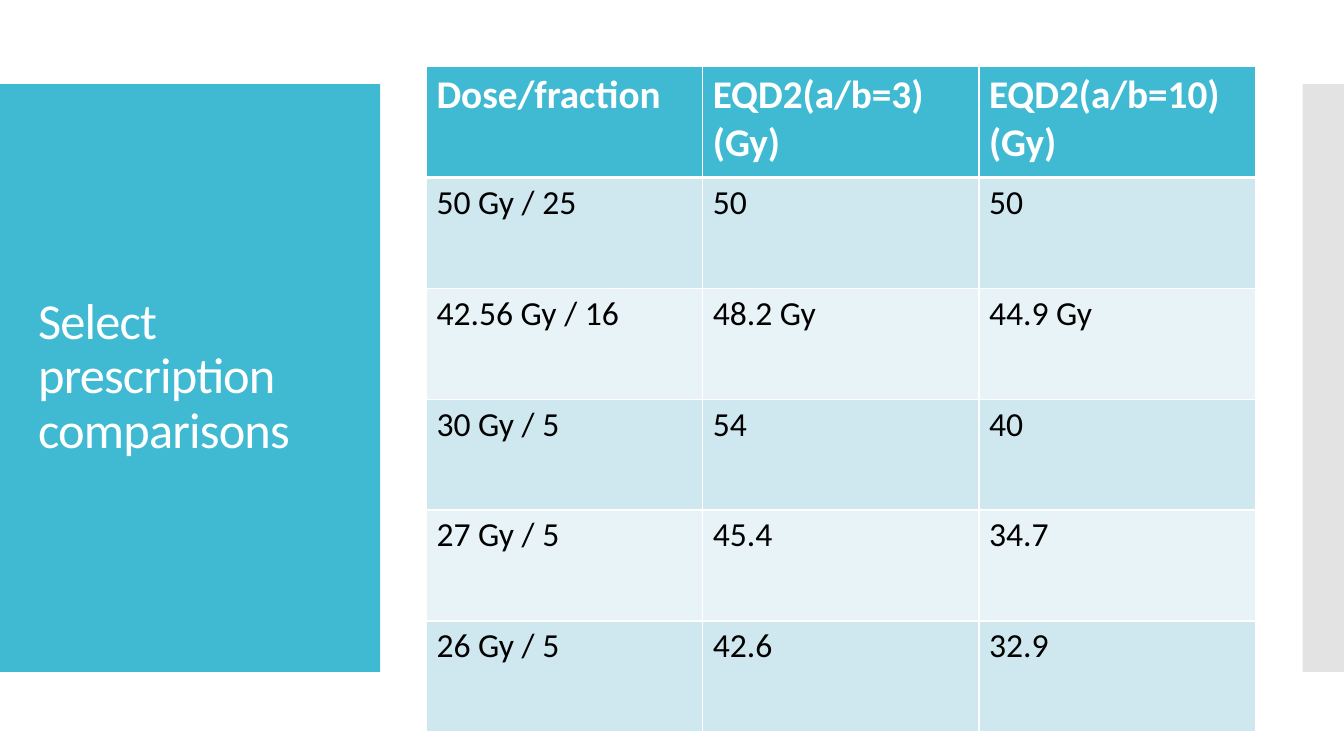
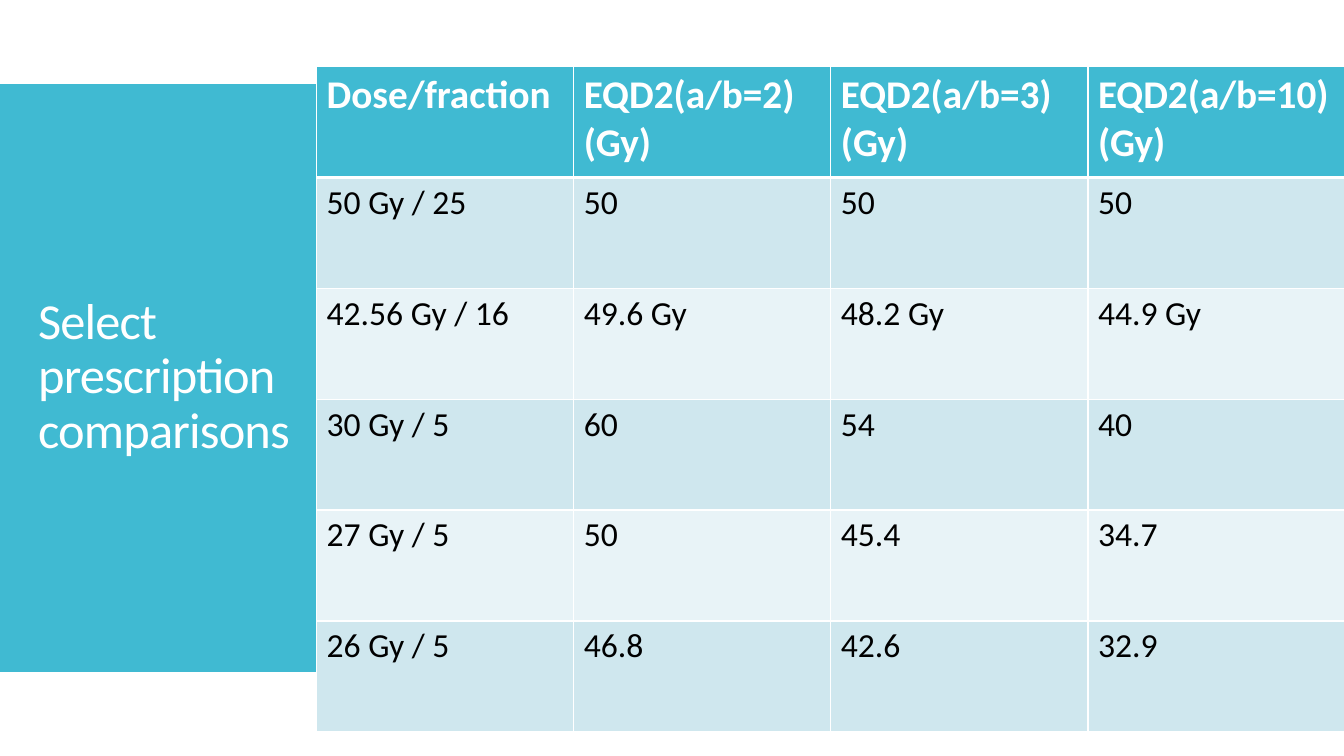
import pptx
import pptx.dml.color
import pptx.enum.shapes
import pptx.enum.text
import pptx.oxml
import pptx.oxml.ns
import pptx.util
from lxml import etree

# Shared look
WIDTH, HEIGHT = 13.33, 7.5
BAND_TOP, BAND_HEIGHT = HEIGHT / 9, HEIGHT * 7 / 9
TABLE_TOP, ROW_HEIGHT = 0.66, 1.1
FONT = "Calibri"
TEAL, GREY, WHITE, BLACK = "40BAD2", "C8C8C8", "FFFFFF", "000000"
STRIPES = ("CFE7EE", "E8F3F7")
TITLE = "Select prescription comparisons"

# Table content, by column
COLUMNS = {
    "Dose/fraction": ("50 Gy / 25", "42.56 Gy / 16", "30 Gy / 5", "27 Gy / 5", "26 Gy / 5"),
    "EQD2(a/b=2) (Gy)": ("50", "49.6 Gy", "60", "50", "46.8"),
    "EQD2(a/b=3) (Gy)": ("50", "48.2 Gy", "54", "45.4", "42.6"),
    "EQD2(a/b=10) (Gy)": ("50", "44.9 Gy", "40", "34.7", "32.9"),
}


def inches(*lengths):
    return [pptx.util.Inches(length) for length in lengths]


def set_fill(fill, color):
    fill.solid()
    fill.fore_color.rgb = pptx.dml.color.RGBColor.from_string(color)


def style_text(para, size, color, bold=False):
    for span in para.runs:
        span.font.name = FONT
        span.font.size = pptx.util.Pt(size)
        span.font.bold = bold
        set_fill(span.font.fill, color)


def add_band(page, left, width, color, opacity=100):
    band = page.shapes.add_shape(
        pptx.enum.shapes.MSO_SHAPE.RECTANGLE, *inches(left, BAND_TOP, width, BAND_HEIGHT))
    band.shadow.inherit = False
    band.line.fill.background()
    set_fill(band.fill, color)
    if opacity < 100:
        tint = band.fill._xPr.find(".//" + pptx.oxml.ns.qn("a:srgbClr"))
        etree.SubElement(tint, pptx.oxml.ns.qn("a:alpha"), val=str(opacity * 1000))


def add_title(page, text):
    box = page.shapes.add_textbox(*inches(0.28, 1.23, 3.22, 5.03))
    frame = box.text_frame
    frame.word_wrap = True
    frame.vertical_anchor = pptx.enum.text.MSO_ANCHOR.MIDDLE
    frame.text = text
    para = frame.paragraphs[0]
    para.line_spacing = 0.9
    style_text(para, 36, WHITE)
    for span in para.runs:
        span.font._element.set("spc", "-60")


def set_borders(cell, top, bottom):
    """Draw white borders; they must precede the fill in the cell's XML."""
    properties = cell._tc.get_or_add_tcPr()
    for side, points in (("L", 1), ("R", 1), ("T", top), ("B", bottom)):
        line = etree.SubElement(properties, pptx.oxml.ns.qn("a:ln" + side),
                                w=str(pptx.util.Pt(points)))
        solid = etree.SubElement(line, pptx.oxml.ns.qn("a:solidFill"))
        etree.SubElement(solid, pptx.oxml.ns.qn("a:srgbClr"), val=WHITE)


def add_dose_table(page, headings, left, column_width):
    rows = [headings, *zip(*(COLUMNS[heading] for heading in headings))]
    table = page.shapes.add_table(
        len(rows), len(headings),
        *inches(left, TABLE_TOP, column_width * len(headings), ROW_HEIGHT * len(rows))).table
    for column in table.columns:
        column.width = pptx.util.Inches(column_width)
    for r, values in enumerate(rows):
        header = r == 0
        for c, value in enumerate(values):
            cell = table.cell(r, c)
            cell.text = value
            set_borders(cell, top=3 if r == 1 else 1, bottom=3 if header else 1)
            set_fill(cell.fill, TEAL if header else STRIPES[(r - 1) % 2])
            style_text(cell.text_frame.paragraphs[0], 28 if header else 24,
                       WHITE if header else BLACK, header)


def add_page(deck, headings, left, column_width):
    page = deck.slides.add_slide(deck.slide_layouts[6])
    add_band(page, 0, 3.77, TEAL)
    add_band(page, WIDTH - 0.41, 0.41, GREY, opacity=50)
    add_title(page, TITLE)
    add_dose_table(page, headings, left, column_width)


def main():
    deck = pptx.Presentation()
    deck.slide_width, deck.slide_height = inches(WIDTH, HEIGHT)
    headings = list(COLUMNS)

    # Two ratios, then all three
    add_page(deck, headings[:1] + headings[2:], left=4.23, column_width=2.74)
    add_page(deck, headings, left=3.14, column_width=2.55)
    deck.save("out.pptx")


if __name__ == "__main__":
    main()
